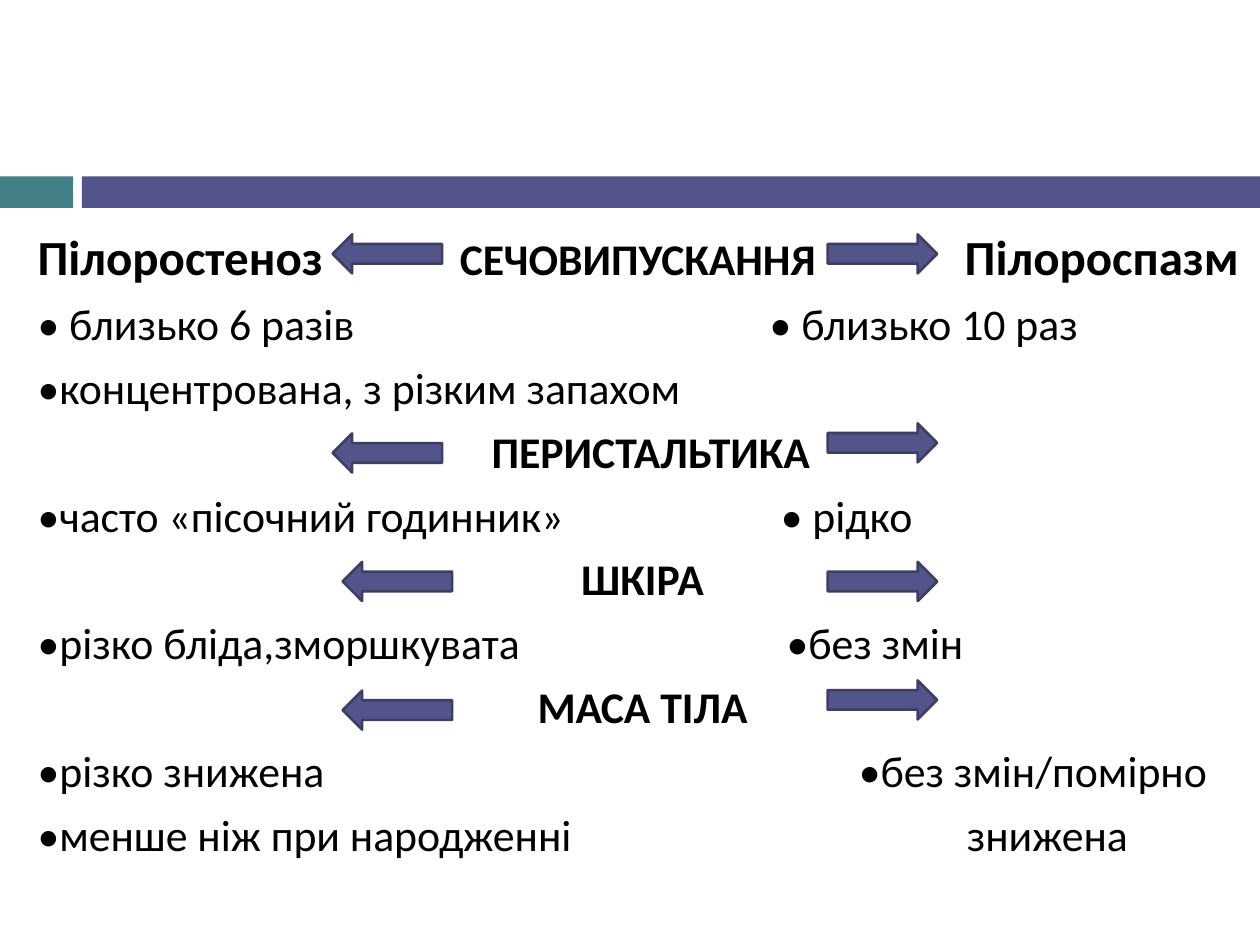
"""Build a slide comparing the signs of pylorostenosis and pylorospasm."""
import pptx
import pptx.dml.color
import pptx.enum.shapes
import pptx.enum.text
import pptx.oxml.ns
import pptx.util
from lxml import etree

Pt = pptx.util.Pt
Kind = pptx.enum.shapes.MSO_SHAPE
Align = pptx.enum.text.PP_ALIGN
theme = {
    "teal": "438086", "violet": "53548A", "edge": "3D3E66", "ink": "000000",
    "font": "Calibri", "head": Pt(28), "body": Pt(25),
}


def tint(name):
    return pptx.dml.color.RGBColor.from_string(theme[name])


def draw(kind, box, fill, edge=None):
    shape = slide.shapes.add_shape(kind, *map(Pt, box))
    shape.shadow.inherit = False
    shape.fill.solid()
    shape.fill.fore_color.rgb = tint(fill)
    if edge:
        shape.line.color.rgb = tint(edge)
        shape.line.width = Pt(1.5)
    else:
        shape.line.fill.background()


deck = pptx.Presentation()
deck.slide_width, deck.slide_height = Pt(720), Pt(540)
slide = deck.slides.add_slide(deck.slide_layouts[6])

draw(Kind.RECTANGLE, (0, 100.8, 41.8, 18), "teal")
draw(Kind.RECTANGLE, (46.8, 100.8, 673.2, 18), "violet")

plain = {"size": theme["body"], "bold": False}
topic = {"size": theme["body"], "bold": True}
title = {"size": theme["head"], "bold": True}
rows = [
    ([("Пілоростеноз", title), ("\tСЕЧОВИПУСКАННЯ", topic), ("\tПілороспазм", title)], (241.3, 529.8)),
    ([("• близько 6 разів\t• близько 10 раз", plain)], (418.4,)),
    ([("•концентрована, з різким запахом", plain)], ()),
    ([("\tПЕРИСТАЛЬТИКА", topic)], (259.5,)),
    ([("•часто «пісочний годинник»\t• рідко", plain)], (424.7,)),
    ([("ШКІРА", topic)], ()),
    ([("•різко бліда,зморшкувата\t•без змін", plain)], (428.1,)),
    ([("МАСА ТІЛА", topic)], ()),
    ([("•різко знижена\t•без змін/помірно", plain)], (469.3,)),
    ([("•менше ніж при народженні\tзнижена", plain)], (531,)),
]

frame = slide.shapes.add_textbox(Pt(14.4), Pt(126), Pt(705.6), Pt(398.9)).text_frame
frame.word_wrap = True
for i, (parts, stops) in enumerate(rows):
    para = frame.add_paragraph() if i else frame.paragraphs[0]
    mid = parts[0][1] is topic and not stops
    look = {"alignment": Align.CENTER if mid else Align.LEFT, "space_before": Pt(6.5)}
    for key, value in look.items():
        setattr(para, key, value)
    if stops:
        tabs = etree.SubElement(para._p.get_or_add_pPr(), pptx.oxml.ns.qn("a:tabLst"))
        for stop in stops:
            etree.SubElement(tabs, pptx.oxml.ns.qn("a:tab"), pos=str(Pt(stop)), algn="l")
    for text, style in parts:
        run = para.add_run()
        run.text = text
        for key, value in {"name": theme["font"], **style}.items():
            setattr(run.font, key, value)
        run.font.color.rgb = tint("ink")

pairs = [(190.1, 133.9, 133.9), (190.1, 247.7, 241.9), (195.8, 321.1, 321.1), (195.8, 394.6, 388.8)]
for left, low, high in pairs:
    for kind, x, y in ((Kind.LEFT_ARROW, left, low), (Kind.RIGHT_ARROW, 473, high)):
        draw(kind, (x, y, 62.6, 22.3), "violet", "edge")

deck.save("out.pptx")
